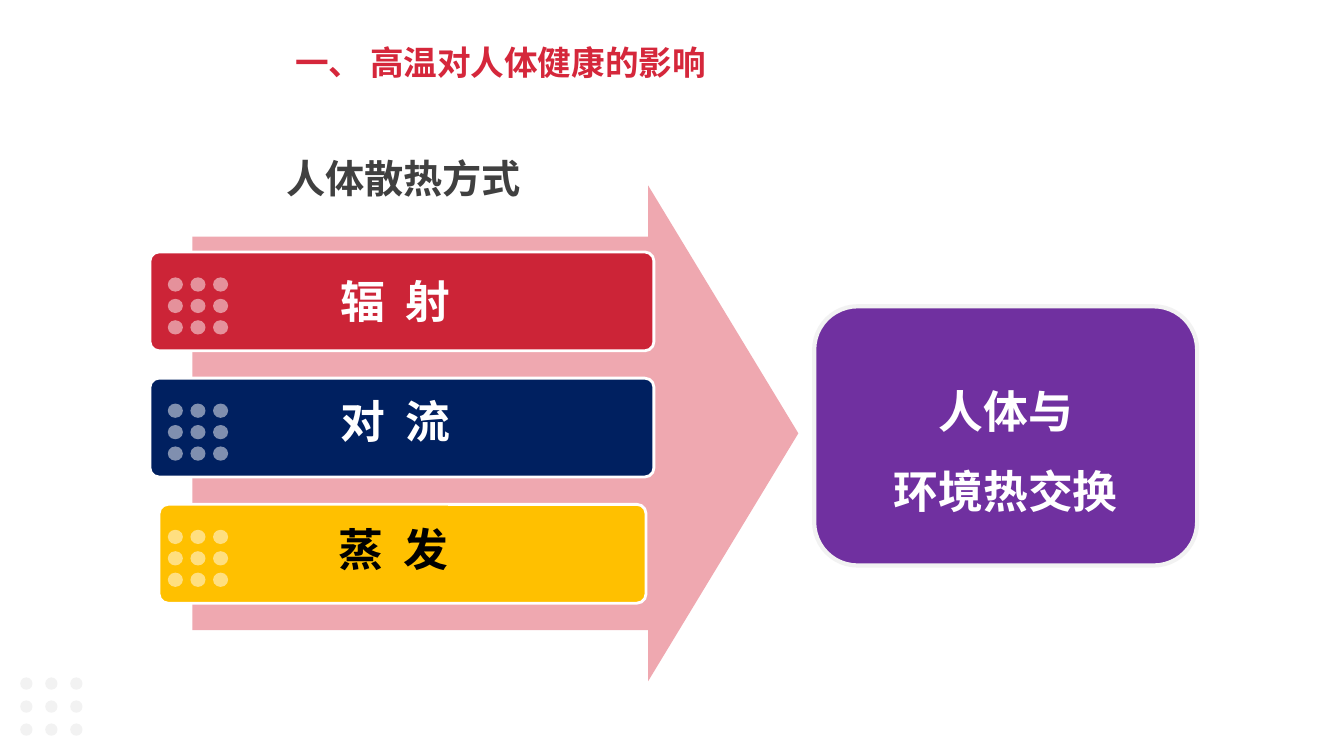
from lxml import etree
from pptx import Presentation
from pptx.dml.color import RGBColor
from pptx.enum import shapes, text
from pptx.oxml import ns
from pptx.util import Cm, Pt

WHITE = RGBColor(0xFF, 0xFF, 0xFF)
BLACK = RGBColor(0x00, 0x00, 0x00)
PALE_GREY = RGBColor(0xF2, 0xF2, 0xF2)
DARK_GREY = RGBColor(0x40, 0x40, 0x40)
TITLE_RED = RGBColor(0xD5, 0x27, 0x3B)
PINK = RGBColor(0xEF, 0xA8, 0xB0)
RED = RGBColor(0xCC, 0x24, 0x37)
NAVY = RGBColor(0x00, 0x20, 0x60)
AMBER = RGBColor(0xFF, 0xC0, 0x00)
PURPLE = RGBColor(0x70, 0x30, 0xA0)

SHAPE = shapes.MSO_SHAPE
CENTER = text.PP_ALIGN.CENTER
LEFT = text.PP_ALIGN.LEFT

deck = Presentation()
deck.slide_width, deck.slide_height = Cm(33.87), Cm(19.05)
page = deck.slides.add_slide(deck.slide_layouts[6])


def add_figure(kind, bounds, color, adjustments=(), border=None, border_width=0):
    figure = page.shapes.add_shape(kind, *map(Cm, bounds))
    figure.shadow.inherit = False
    figure.fill.solid()
    figure.fill.fore_color.rgb = color
    for index, value in enumerate(adjustments):
        figure.adjustments[index] = value
    if border is None:
        figure.line.fill.background()
    else:
        figure.line.color.rgb = border
        figure.line.width = Pt(border_width)
    return figure


def add_label(bounds, lines, size, color, align=LEFT, spacing=1.0, wrap=False):
    box = page.shapes.add_textbox(*map(Cm, bounds))
    frame = box.text_frame
    frame.word_wrap = wrap
    frame.auto_size = text.MSO_AUTO_SIZE.SHAPE_TO_FIT_TEXT
    font_format = {"name": "Times New Roman", "size": Pt(size), "bold": True}
    for index, line in enumerate(lines):
        para = frame.add_paragraph() if index else frame.paragraphs[0]
        para.alignment = align
        para.line_spacing = spacing
        span = para.add_run()
        span.text = line
        for name, value in font_format.items():
            setattr(span.font, name, value)
        span.font.color.rgb = color


add_label((7.19, 0.94, 10.87, 1.27), ["一、 高温对人体健康的影响"], 24, TITLE_RED)
add_figure(SHAPE.RIGHT_ARROW, (4.85, 4.67, 15.27, 12.5), PINK, (0.793, 0.303))

BAR_TOP, BAR_STEP, BAR_HEIGHT = 6.35, 3.18, 2.49
bars = [
    ("辐  射", RED, WHITE, 3.78, 12.7, 8.31, 6.78),
    ("对  流", NAVY, WHITE, 3.78, 12.7, 8.31, 9.8),
    ("蒸  发", AMBER, BLACK, 4.01, 12.27, 8.26, 13.03),
]
dot_grids = [(0.51, 17.07, 0.63, 0.58, 0.31, 0.31, PALE_GREY, 100)]
for row, (word, fill, ink, left, width, word_left, word_top) in enumerate(bars):
    top = BAR_TOP + row * BAR_STEP
    add_figure(SHAPE.ROUNDED_RECTANGLE, (left, top, width, BAR_HEIGHT), fill, (0.091,), WHITE, 2)
    add_label((word_left, word_top, 3.33, 1.63), [word], 32, ink, CENTER)
    dot_grids.append((4.23, top + 0.64, 0.57, 0.54, 0.38, 0.36, WHITE, 50))

for left, top, step_x, step_y, width, height, color, opacity in dot_grids:
    for index in range(9):
        row, column = divmod(index, 3)
        dot = add_figure(SHAPE.OVAL, (left + column * step_x, top + row * step_y, width, height), color)
        if opacity < 100:
            tint = dot.fill._xPr.find(".//" + ns.qn("a:srgbClr"))
            etree.SubElement(tint, ns.qn("a:alpha")).set("val", str(opacity * 1000))

add_figure(SHAPE.ROUNDED_RECTANGLE, (20.52, 7.72, 9.65, 6.53), PURPLE, (0.167,), PALE_GREY, 3)
add_label((21.72, 8.86, 7.26, 4.37), ["人体与", "环境热交换"], 32, WHITE, CENTER, 1.5, True)
add_label((6.96, 3.76, 6.43, 1.45), ["人体散热方式"], 28, DARK_GREY)

deck.save("out.pptx")
